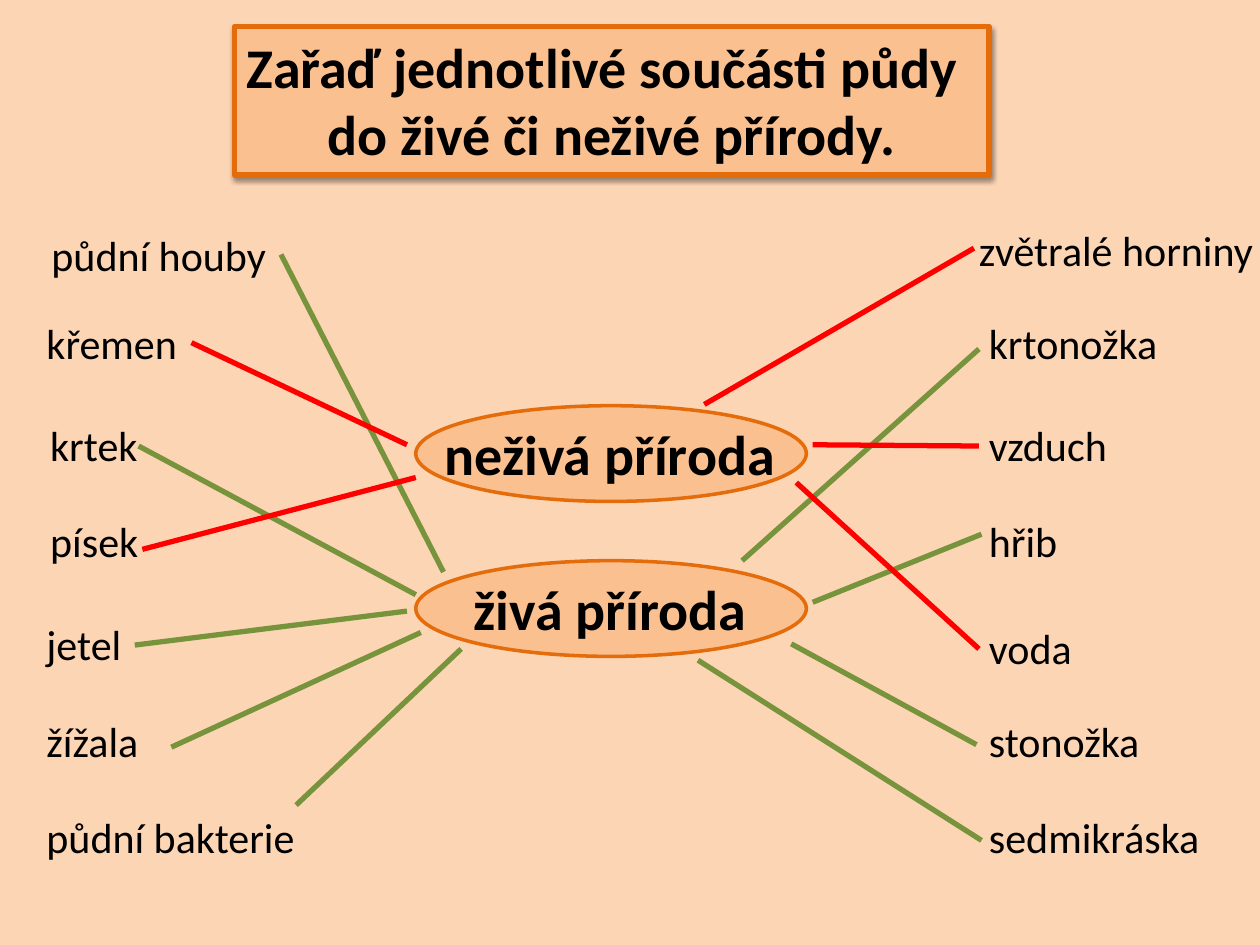
"""Build a matching exercise that sorts soil components into living and non-living nature."""
import dataclasses

import lxml.etree
import pptx
import pptx.dml.color
import pptx.enum.shapes
import pptx.enum.text
import pptx.oxml
import pptx.oxml.ns
import pptx.util

Inches = pptx.util.Inches
Shapes = pptx.enum.shapes.MSO_SHAPE
Align = pptx.enum.text.PP_ALIGN


@dataclasses.dataclass(frozen=True)
class Theme:
    font: str = "Calibri"
    heading_size: int = 32
    word_size: int = 24
    text: str = "000000"
    background: str = "FCD5B5"
    fill: str = "FAC090"
    border: str = "E46C0A"
    living: str = "77933C"
    lifeless: str = "FF0000"
    ellipse_line: int = 2
    thick_line: int = 3


def rgb(value):
    return pptx.dml.color.RGBColor.from_string(value)


class SlideBuilder:
    def __init__(self, slide, theme):
        self.slide = slide
        self.theme = theme
        background = slide.background.fill
        background.solid()
        background.fore_color.rgb = rgb(theme.background)

    def panel(self, kind, left, top, width, height, line_width):
        panel = self.slide.shapes.add_shape(
            kind, Inches(left), Inches(top), Inches(width), Inches(height))
        panel.shadow.inherit = False
        panel.fill.solid()
        panel.fill.fore_color.rgb = rgb(self.theme.fill)
        panel.line.color.rgb = rgb(self.theme.border)
        panel.line.width = pptx.util.Pt(line_width)
        return panel

    def add_text(self, box, lines, size, bold, wrap=False):
        frame = box.text_frame
        frame.word_wrap = wrap
        frame.auto_size = pptx.enum.text.MSO_AUTO_SIZE.SHAPE_TO_FIT_TEXT
        frame.vertical_anchor = pptx.enum.text.MSO_ANCHOR.TOP
        for index, (text, alignment) in enumerate(lines):
            para = frame.add_paragraph() if index else frame.paragraphs[0]
            para.alignment = alignment
            span = para.add_run()
            span.text = text
            span.font.name = self.theme.font
            span.font.size = pptx.util.Pt(size)
            span.font.bold = bold
            span.font.color.rgb = rgb(self.theme.text)

    def title(self, lines, left, top, width, height):
        box = self.panel(Shapes.RECTANGLE, left, top, width, height, self.theme.thick_line)
        effects = box._element.spPr.find(pptx.oxml.ns.qn("a:effectLst"))
        effects.append(pptx.oxml.parse_xml(
            f'<a:outerShdw {pptx.oxml.ns.nsdecls("a")} blurRad="39370" dist="20320" '
            'dir="5400000" rotWithShape="0"><a:srgbClr val="000000">'
            '<a:alpha val="38000"/></a:srgbClr></a:outerShdw>'))
        self.add_text(box, lines, self.theme.heading_size, True, wrap=True)

    def label(self, text, left, top, width, height, size, bold=False):
        box = self.slide.shapes.add_textbox(
            Inches(left), Inches(top), Inches(width), Inches(height))
        self.add_text(box, [(text, Align.LEFT)], size, bold)

    def category(self, text, top, text_left, text_width):
        self.panel(Shapes.OVAL, 3.3, top, 3.1, 0.76, self.theme.ellipse_line)
        self.label(text, text_left, top + 0.06, text_width, 0.64,
                   self.theme.heading_size, True)

    def word(self, text, left, top, width):
        self.label(text, left, top, width, 0.5, self.theme.word_size)

    def link(self, start, end, color):
        link = self.slide.shapes.add_connector(
            pptx.enum.shapes.MSO_CONNECTOR.STRAIGHT, *map(Inches, start + end))
        link.line.color.rgb = rgb(color)
        link.line.width = pptx.util.Pt(self.theme.thick_line)
        lxml.etree.SubElement(link._element.spPr, pptx.oxml.ns.qn("a:effectLst"))


def main():
    theme = Theme()
    deck = pptx.Presentation()
    deck.slide_width, deck.slide_height = Inches(10), Inches(7.5)
    page = SlideBuilder(deck.slides.add_slide(deck.slide_layouts[6]), theme)

    page.category("živá příroda", 4.45, 3.66, 2.39)
    page.category("neživá příroda", 3.22, 3.43, 2.85)
    page.title([("Zařaď jednotlivé součásti půdy", Align.LEFT),
                ("do živé či neživé přírody.", Align.CENTER)], 1.86, 0.21, 5.99, 1.18)

    living, lifeless = theme.living, theme.lifeless
    words = [
        ("půdní houby", 0.31, 1.77, 1.92, (2.23, 2.02), (3.52, 4.54), living),
        ("křemen", 0.27, 2.47, 1.25, (1.52, 2.72), (3.23, 3.53), lifeless),
        ("krtek", 0.3, 3.28, 0.9, (1.1, 3.54), (3.3, 4.72), living),
        ("písek", 0.3, 4.04, 0.91, (1.13, 4.36), (3.3, 3.79), lifeless),
        ("jetel", 0.27, 4.86, 0.8, (1.07, 5.12), (3.23, 4.85), living),
        ("žížala", 0.27, 5.63, 0.94, (1.36, 5.93), (3.34, 5.02), living),
        ("půdní bakterie", 0.27, 6.39, 2.19, (2.35, 6.39), (3.66, 5.15), living),
        ("zvětralé horniny", 7.67, 1.73, 2.4, (7.73, 1.97), (5.59, 3.21), lifeless),
        ("krtonožka", 7.75, 2.47, 1.55, (7.77, 2.77), (5.89, 4.45), living),
        ("vzduch", 7.75, 3.28, 1.15, (7.77, 3.54), (6.45, 3.53), lifeless),
        ("hřib", 7.75, 4.04, 0.75, (7.79, 4.24), (6.45, 4.78), living),
        ("voda", 7.75, 4.89, 0.87, (7.77, 5.15), (6.32, 3.83), lifeless),
        ("stonožka", 7.75, 5.63, 1.41, (7.75, 5.91), (6.28, 5.11), living),
        ("sedmikráska", 7.75, 6.39, 1.89, (7.79, 6.67), (5.54, 5.24), living),
    ]
    for text, left, top, width, start, end, color in words:
        page.word(text, left, top, width)
        page.link(start, end, color)

    deck.save("out.pptx")


if __name__ == "__main__":
    main()
